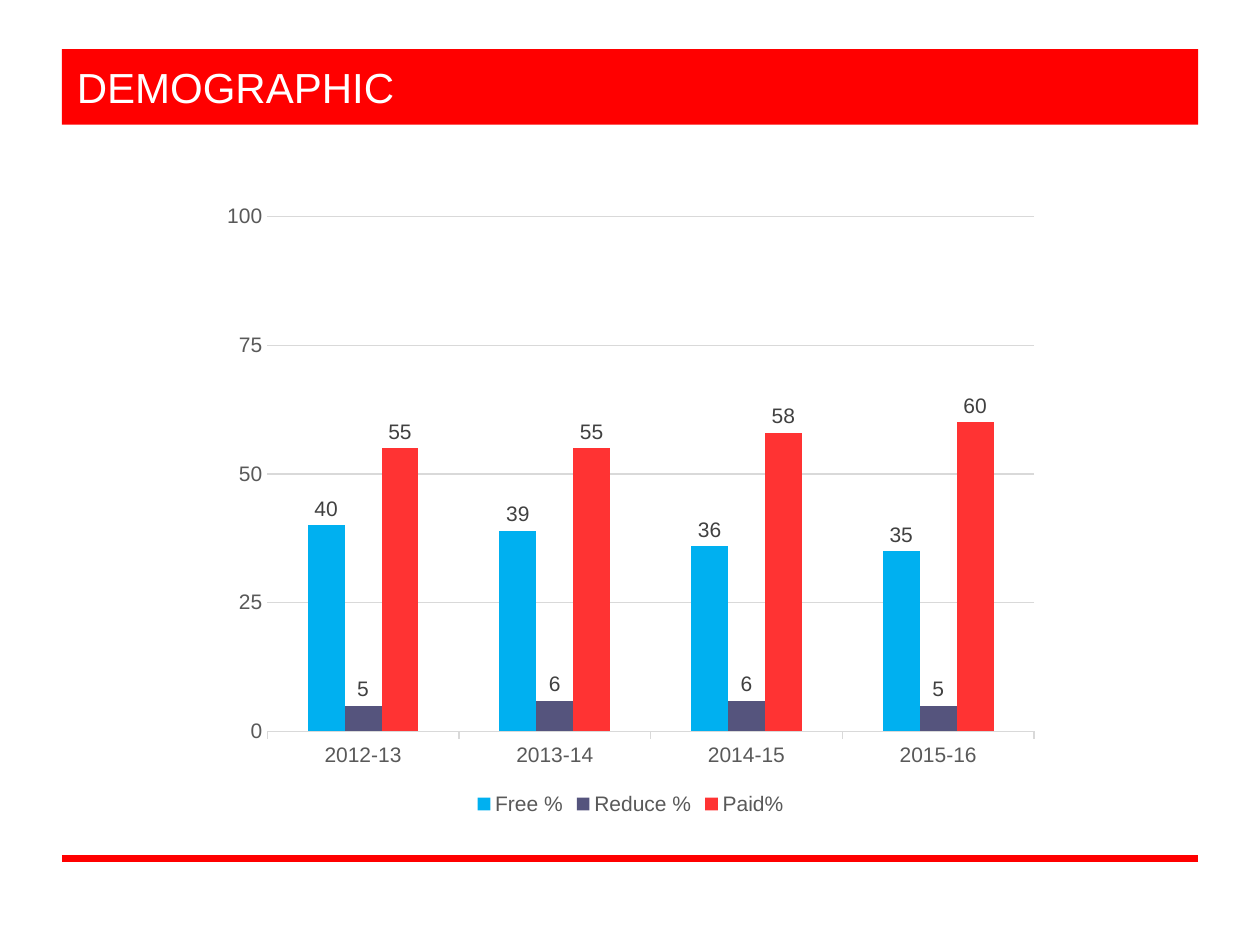
from dataclasses import dataclass

from lxml import etree
from pptx import Presentation
from pptx.chart.data import CategoryChartData
from pptx.dml.color import RGBColor
from pptx.enum.chart import XL_CHART_TYPE, XL_LABEL_POSITION, XL_LEGEND_POSITION, XL_TICK_MARK
from pptx.enum.shapes import MSO_CONNECTOR, MSO_SHAPE
from pptx.enum.text import MSO_ANCHOR, PP_ALIGN
from pptx.oxml.ns import qn
from pptx.slide import Slide
from pptx.text.text import Font
from pptx.util import Pt

COLUMN_CLUSTERED = XL_CHART_TYPE.COLUMN_CLUSTERED
OUTSIDE_END = XL_LABEL_POSITION.OUTSIDE_END
LEGEND_BOTTOM = XL_LEGEND_POSITION.BOTTOM
TICK_OUTSIDE = XL_TICK_MARK.OUTSIDE
TICK_NONE = XL_TICK_MARK.NONE
STRAIGHT = MSO_CONNECTOR.STRAIGHT
RECTANGLE = MSO_SHAPE.RECTANGLE
MIDDLE = MSO_ANCHOR.MIDDLE
LEFT = PP_ALIGN.LEFT

FONT_NAME = "Arial"
COLORS = {
    "banner": "FF0000",
    "white": "FFFFFF",
    "axis_text": "595959",
    "label_text": "404040",
    "grid": "D9D9D9",
    "free": "00B0F0",
    "reduced": "55547D",
    "paid": "FF3333",
}
MARGIN_LEFT, MARGIN_RIGHT = 35.28, 684.72


@dataclass(frozen=True)
class MealSeries:
    name: str
    values: tuple[int, ...]
    color: str


SCHOOL_YEARS = ("2012-13", "2013-14", "2014-15", "2015-16")
MEAL_SERIES = (
    MealSeries("Free %", (40, 39, 36, 35), "free"),
    MealSeries("Reduce %", (5, 6, 6, 5), "reduced"),
    MealSeries("Paid%", (55, 55, 58, 60), "paid"),
)


def color(name: str) -> RGBColor:
    return RGBColor.from_string(COLORS[name])


def style_font(font: Font, size: float, color_name: str) -> None:
    font.name = FONT_NAME
    font.size = Pt(size)
    font.bold = False
    font.color.rgb = color(color_name)


def add_footer_rule(slide: Slide) -> None:
    rule = slide.shapes.add_connector(
        STRAIGHT, Pt(MARGIN_RIGHT), Pt(490.32), Pt(MARGIN_LEFT), Pt(490.32)
    )
    rule.line.color.rgb = color("banner")
    rule.line.width = Pt(4)
    etree.SubElement(rule.element.spPr, qn("a:effectLst"))


def add_title(slide: Slide, text: str) -> None:
    banner = slide.shapes.add_shape(
        RECTANGLE, Pt(MARGIN_LEFT), Pt(28.08), Pt(MARGIN_RIGHT - MARGIN_LEFT), Pt(43.2)
    )
    banner.shadow.inherit = False
    banner.fill.solid()
    banner.fill.fore_color.rgb = color("banner")
    banner.line.fill.background()
    frame = banner.text_frame
    frame.word_wrap = True
    frame.vertical_anchor = MIDDLE
    frame.margin_left, frame.margin_top = Pt(8.64), Pt(10.08)
    frame.margin_right, frame.margin_bottom = Pt(5.76), Pt(7.2)
    paragraph = frame.paragraphs[0]
    paragraph.alignment = LEFT
    paragraph.line_spacing = 0.9
    run = paragraph.add_run()
    run.text = text
    style_font(run.font, 24, "white")


def add_meal_chart(slide: Slide) -> None:
    data = CategoryChartData()
    data.categories = SCHOOL_YEARS
    for meal in MEAL_SERIES:
        data.add_series(meal.name, meal.values)
    chart = slide.shapes.add_chart(
        COLUMN_CLUSTERED, Pt(120.24), Pt(110.16), Pt(480.24), Pt(358.56), data
    ).chart
    chart.has_title = False
    style_font(chart.font, 12, "axis_text")
    chart.has_legend = True
    chart.legend.position = LEGEND_BOTTOM
    chart.legend.include_in_layout = False
    style_font(chart.legend.font, 12, "axis_text")

    category_axis, value_axis = chart.category_axis, chart.value_axis
    for axis in (category_axis, value_axis):
        style_font(axis.tick_labels.font, 12, "axis_text")
    category_axis.major_tick_mark = TICK_OUTSIDE
    value_axis.major_tick_mark = TICK_NONE
    value_axis.minimum_scale, value_axis.maximum_scale = 0, 100
    value_axis.major_unit = 25
    value_axis.has_major_gridlines = True
    value_axis.format.line.fill.background()
    for line in (category_axis.format.line, value_axis.major_gridlines.format.line):
        line.color.rgb = color("grid")
        line.width = Pt(0.75)

    plot = chart.plots[0]
    plot.gap_width = 219
    plot.overlap = 0
    plot.vary_by_categories = False
    for series, meal in zip(plot.series, MEAL_SERIES):
        series.format.fill.solid()
        series.format.fill.fore_color.rgb = color(meal.color)
        series.invert_if_negative = False
        labels = series.data_labels
        labels.show_value = True
        labels.position = OUTSIDE_END
        style_font(labels.font, 12, "label_text")


def main() -> None:
    """Build the demographic slide with its meal status chart."""
    presentation = Presentation()
    presentation.slide_width, presentation.slide_height = Pt(720), Pt(540)
    slide = presentation.slides.add_slide(presentation.slide_layouts[6])
    add_footer_rule(slide)
    add_title(slide, "DEMOGRAPHIC")
    add_meal_chart(slide)
    presentation.save("out.pptx")


if __name__ == "__main__":
    main()
